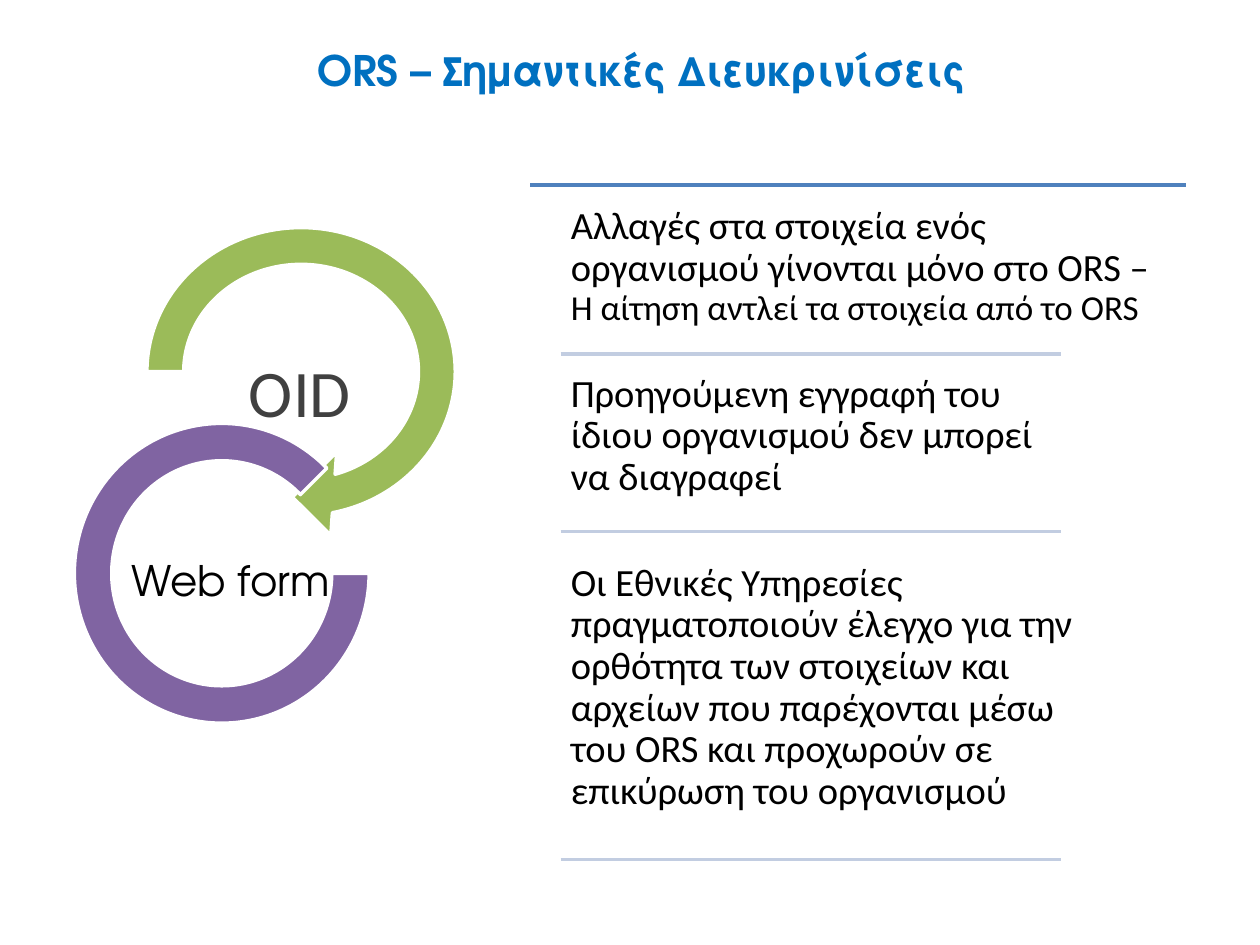
from pptx import Presentation
from pptx.dml.color import RGBColor
from pptx.enum.shapes import MSO_CONNECTOR, MSO_SHAPE
from pptx.enum.text import MSO_ANCHOR, PP_ALIGN
from pptx.oxml.ns import qn
from pptx.util import Inches, Pt
from lxml.etree import SubElement

BODY, DISPLAY = "Calibri", "TeX Gyre Adventor"
color = RGBColor.from_string


def add_text(box, runs, font, hex_color, inset, centered=False, spacing=0.9, bold=False):
    """Add a one-paragraph text box; runs holds (text, size in points) pairs."""
    frame = slide.shapes.add_textbox(*map(Inches, box)).text_frame
    frame.word_wrap = True
    frame.margin_left = frame.margin_right = Inches(inset)
    frame.margin_top = frame.margin_bottom = Inches(min(inset, 0.09))
    frame.vertical_anchor = MSO_ANCHOR.MIDDLE if centered else MSO_ANCHOR.TOP
    paragraph = frame.paragraphs[0]
    paragraph.alignment = PP_ALIGN.CENTER if centered else PP_ALIGN.LEFT
    paragraph.line_spacing = spacing
    for text, size in runs:
        run = paragraph.add_run()
        run.text = text
        run.font.name = font
        run.font.size = Pt(size)
        run.font.bold = bold
        run.font.color.rgb = color(hex_color)


prs = Presentation()
prs.slide_width, prs.slide_height = Inches(10), Inches(7.5)
slide = prs.slides.add_slide(prs.slide_layouts[6])

# Two linked rings, each with its label
rings = [
    (MSO_SHAPE.CIRCULAR_ARROW, (0.98, 1.62, 2.82, 2.66), (0.11, 11.42, 45, 108, 0.125),
     "9BBB59", "OID ", (1.77, 2.81, 1.34, 0.67), 38, BODY, "404040"),
    (MSO_SHAPE.BLOCK_ARC, (0.59, 3.36, 2.34, 2.38), (0, 189, 0.127),
     "8064A2", "Web form", (0.94, 4.29, 1.78, 0.67), 24, DISPLAY, "000000"),
]
for preset, box, adjustments, fill, label, label_box, size, font, label_color in rings:
    ring = slide.shapes.add_shape(preset, *map(Inches, box))
    ring.shadow.inherit = False
    for i, value in enumerate(adjustments):
        ring.adjustments[i] = value
    ring.fill.solid()
    ring.fill.fore_color.rgb = color(fill)
    ring.line.color.rgb = color("FFFFFF")
    ring.line.width = Pt(2)
    add_text(label_box, [(label, size)], font, label_color, 0.02, centered=True)

# Rules that separate the clarifications
rules = [(4.21, 9.41, 1.47, "4F81BD")]
rules += [(4.45, 8.42, y, "C2CDE1") for y in (2.81, 4.22, 6.82)]
for left, right, y, line_color in rules:
    rule = slide.shapes.add_connector(
        MSO_CONNECTOR.STRAIGHT, Inches(left), Inches(y), Inches(right), Inches(y))
    rule.line.color.rgb = color(line_color)
    rule.line.width = Pt(2)
    SubElement(rule._element.spPr, qn("a:effectLst"))

clarifications = [
    (1.55, 4.97, [("Αλλαγές στα στοιχεία ενός οργανισμού γίνονται μόνο στο ORS – ", 22),
                  ("Η αίτηση αντλεί τα στοιχεία από το ORS", 20)]),
    (2.88, 3.9, [("Προηγούμενη εγγραφή του ίδιου οργανισμού δεν μπορεί να διαγραφεί", 22)]),
    (4.38, 4.29, [("Οι Εθνικές Υπηρεσίες πραγματοποιούν έλεγχο για την ορθότητα των "
                   "στοιχείων και αρχείων που παρέχονται μέσω του ORS και προχωρούν σε "
                   "επικύρωση του οργανισμού", 22)]),
]
for top, width, runs in clarifications:
    add_text((4.44, top, width, 1.67), runs, BODY, "000000", 0.09)

add_text((0.59, 0.13, 9, 0.85), [("ORS – Σημαντικές Διευκρινίσεις", 24)],
         DISPLAY, "0070C0", 0.1, centered=True, spacing=1.0, bold=True)

prs.save("out.pptx")
